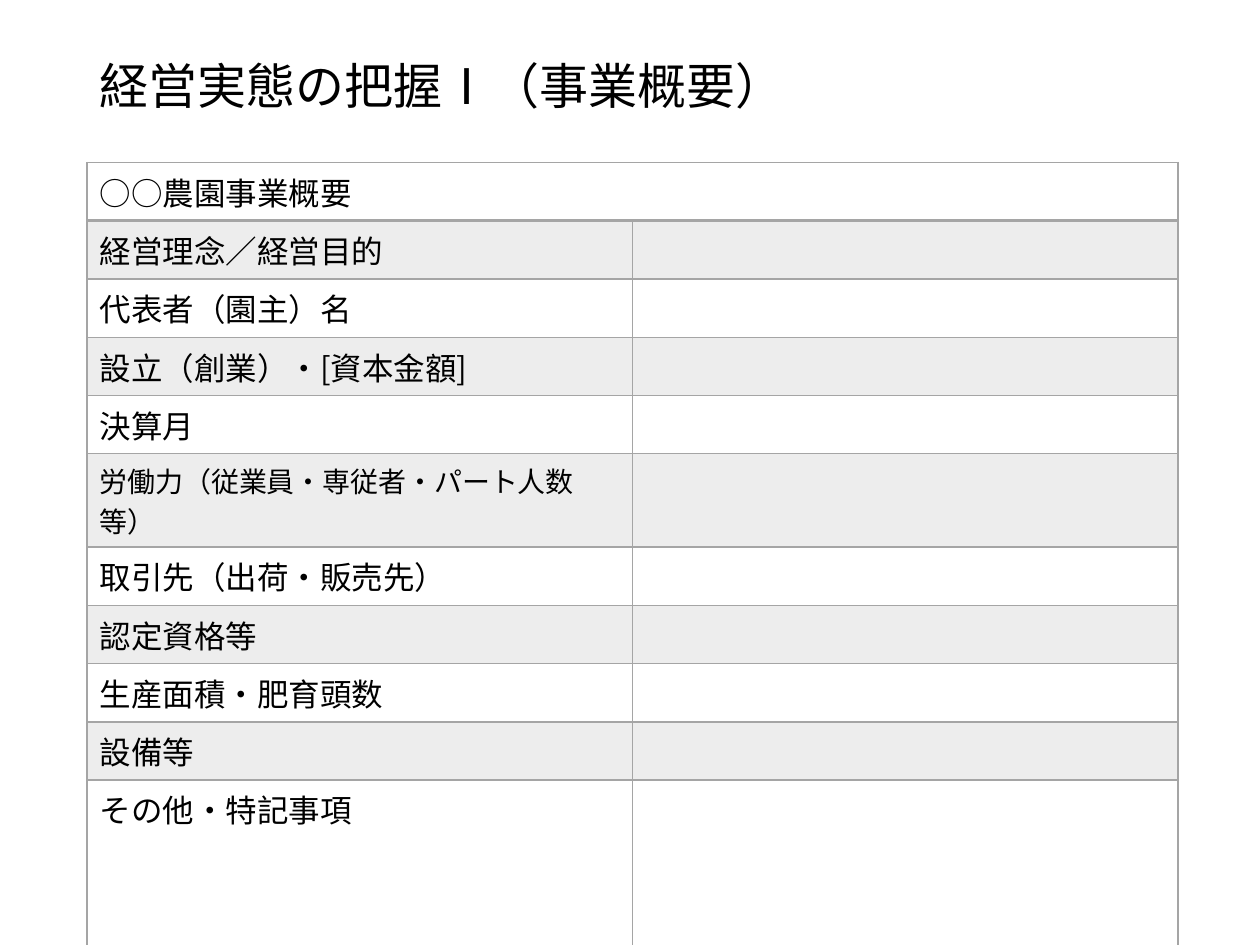
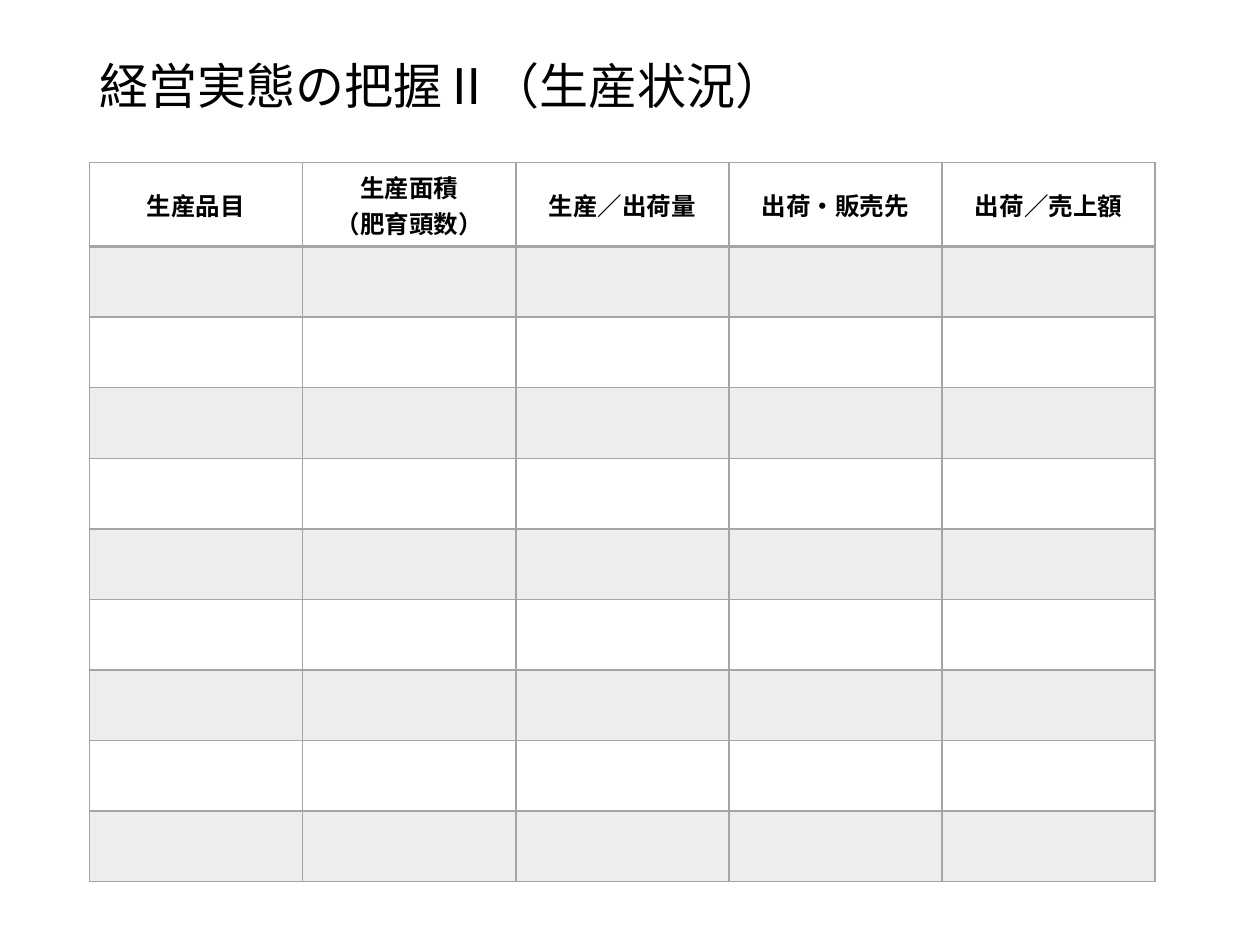
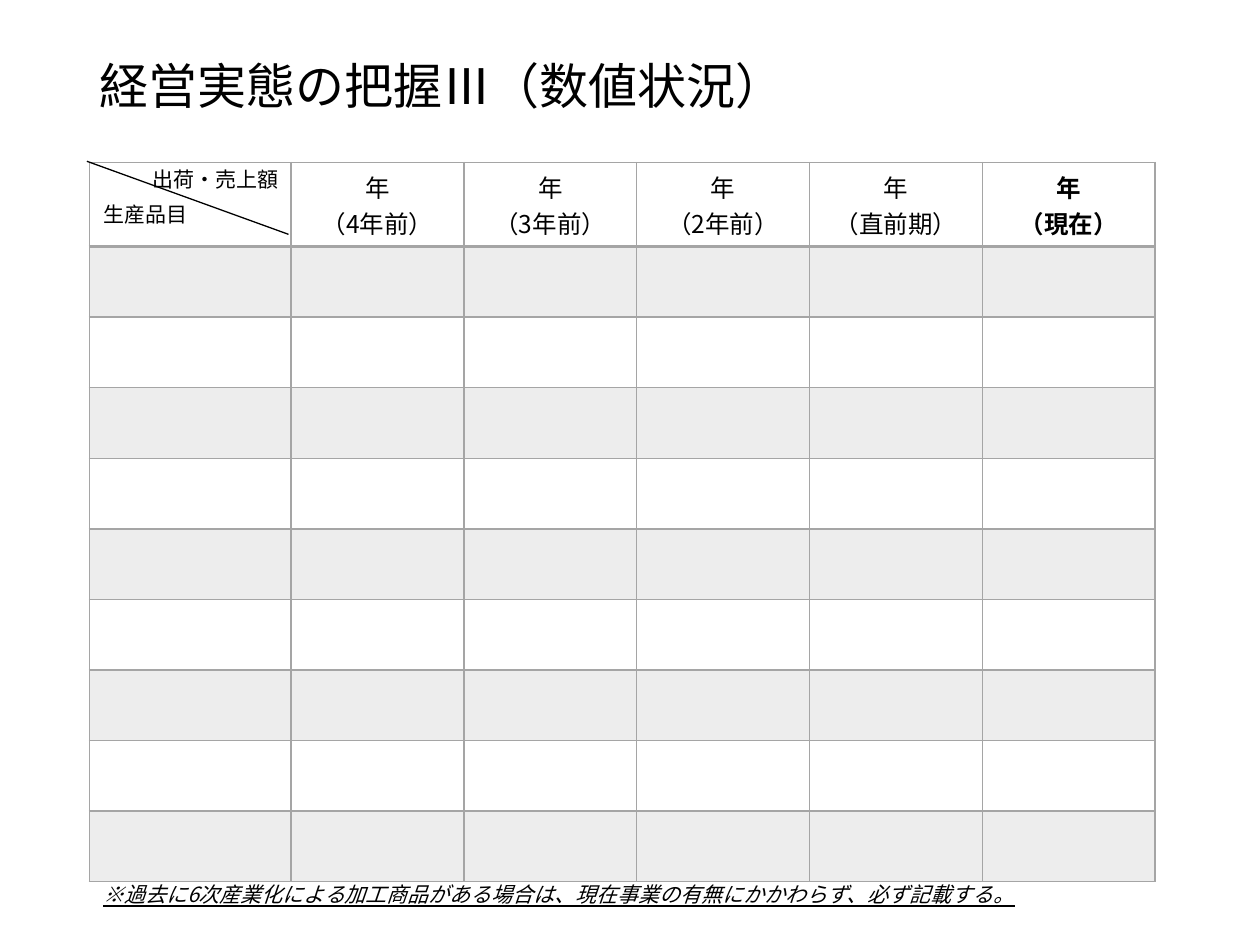
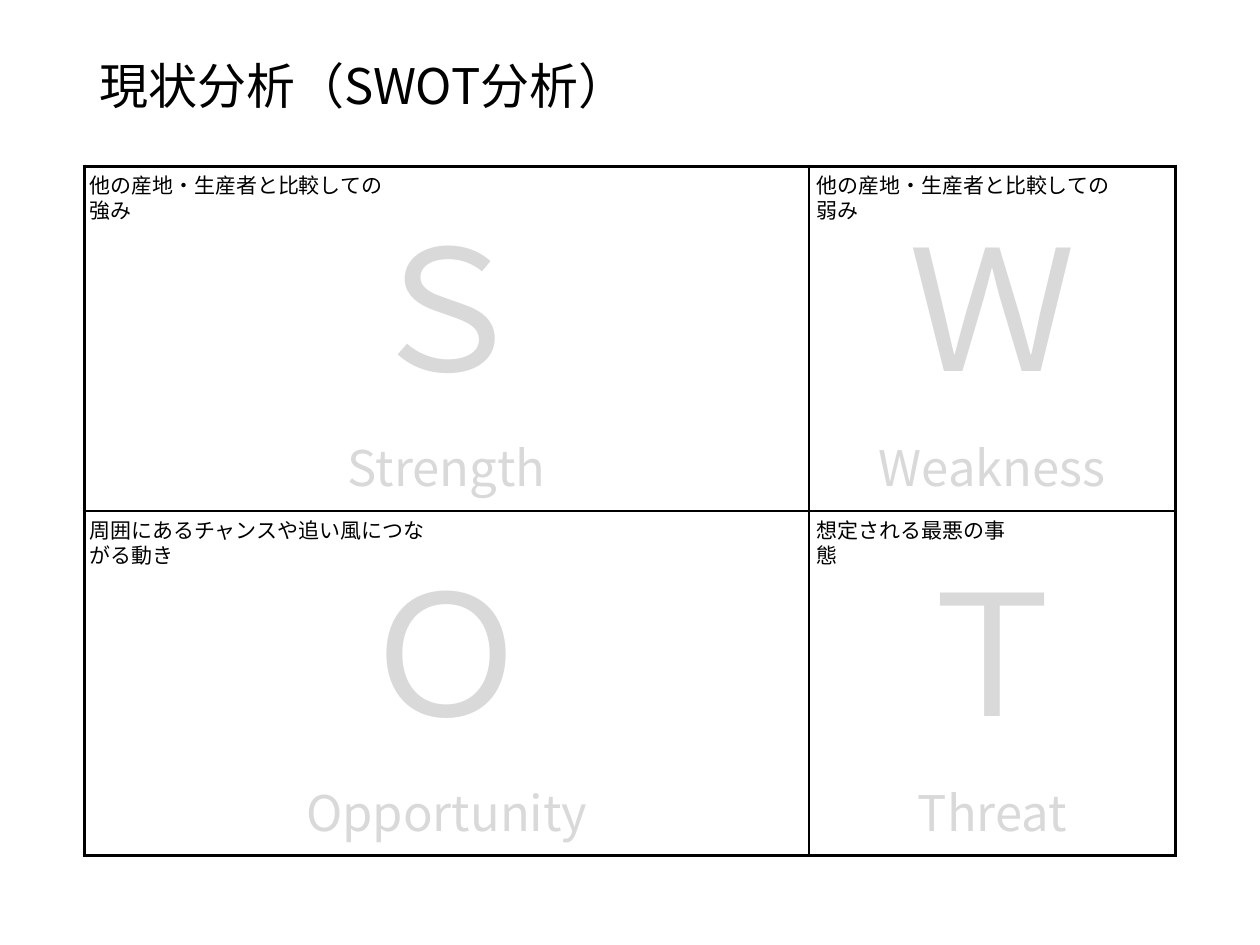
from dataclasses import dataclass

import lxml.etree
import pptx
import pptx.dml.color
import pptx.enum.shapes
import pptx.enum.text
import pptx.oxml.ns
import pptx.presentation
import pptx.shapes.autoshape
import pptx.slide
import pptx.table
import pptx.text.text
import pptx.util

ALIGN = pptx.enum.text.PP_ALIGN
ANCHOR = pptx.enum.text.MSO_ANCHOR
FIT = pptx.enum.text.MSO_AUTO_SIZE
qn = pptx.oxml.ns.qn

WIDE, HIGH = pptx.util.Inches(10), pptx.util.Inches(7.5)
COLS = 100  # the slide is a grid of 100 by 75 square units


@dataclass(frozen=True)
class Theme:
    ink: str = "000000"
    rule: str = "A5A5A5"
    ghost: str = "D9D9D9"
    tint: int = 20
    font: str = "Noto Sans CJK JP"
    latin: str = "Calibri"
    title: float = 28
    body: float = 18
    small: float = 16
    head: float = 14
    note: float = 12
    huge: float = 96


@dataclass(frozen=True)
class Box:
    """A place on the slide, in grid units."""
    left: float
    top: float
    width: float
    height: float


@dataclass(frozen=True)
class Grid:
    """A table: its corner, columns and rows in grid units, and its lines in points."""
    left: float
    top: float
    cols: tuple[float, ...]
    rows: tuple[float, ...]
    rule: str
    outer: float = 1
    under: float = 1
    bands: bool = True


@dataclass(frozen=True)
class Force:
    """One quarter of the SWOT table, with the width of its caption."""
    row: int
    col: int
    sign: str
    name: str
    note: str
    width: float


THEME = Theme()
TITLE = Box(6.9, 4, 86.2, 6.1)
SHEET = (5.8,) + (5.6,) * 9

FACTS = (
    "○○農園事業概要",
    "経営理念／経営目的",
    "代表者（園主）名",
    "設立（創業）・[資本金額]",
    "決算月",
    "労働力（従業員・専従者・パート人数等）",
    "取引先（出荷・販売先）",
    "認定資格等",
    "生産面積・肥育頭数",
    "設備等",
    "その他・特記事項",
)
LONG = 5  # the row of FACTS set in smaller type

HEADS = (
    ("生産品目", THEME.latin),
    ("生産面積\n（肥育頭数）", THEME.latin),
    ("生産／出荷量", THEME.latin),
    ("出荷・販売先", THEME.font),
    ("出荷／売上額", THEME.latin),
)

YEARS = ("4年前", "3年前", "2年前", "直前期", "現在")

FORCES = (
    Force(0, 0, "Ｓ", "Strength", "他の産地・生産者と比較しての強み", 25.8),
    Force(0, 1, "Ｗ", "Weakness", "他の産地・生産者と比較しての弱み", 25.8),
    Force(1, 0, "Ｏ", "Opportunity", "周囲にあるチャンスや追い風につながる動き", 30.1),
    Force(1, 1, "Ｔ", "Threat", "想定される最悪の事態", 17.4),
)


def unit(count: float) -> int:
    return round(WIDE * count / COLS)


def place(box: Box) -> tuple[int, int, int, int]:
    return unit(box.left), unit(box.top), unit(box.width), unit(box.height)


def tone(code: str) -> pptx.dml.color.RGBColor:
    return pptx.dml.color.RGBColor.from_string(code)


def write(frame: pptx.text.text.TextFrame, text: str, *, size: float,
          color: str = THEME.ink, font: str = THEME.font, bold: bool = False,
          slant: bool = False, under: bool = False, align: ALIGN = ALIGN.LEFT,
          lead: float | None = None, gap: float = 0) -> None:
    """Add each line of the text as a paragraph; gap is a share of the type size."""
    for line in text.split("\n"):
        para = frame.paragraphs[0]
        if para.runs:
            para = frame.add_paragraph()
        para.alignment = align
        if lead:
            para.line_spacing = lead
        if gap:
            para.space_before = pptx.util.Pt(size * gap)
        run = para.add_run()
        run.text = line
        style = run.font
        style.name, style.size, style.bold = font, pptx.util.Pt(size), bold
        style.italic, style.underline = slant, under
        style.color.rgb = tone(color)
        east = lxml.etree.Element(qn("a:ea"), typeface=THEME.font)
        run._r.rPr.find(qn("a:latin")).addnext(east)


def start(deck: pptx.presentation.Presentation, text: str) -> pptx.slide.Slide:
    """Add a title-only slide and set its title."""
    slide = deck.slides.add_slide(deck.slide_layouts[5])
    title = slide.shapes.title
    title.left, title.top, title.width, title.height = place(TITLE)
    frame = title.text_frame
    frame.auto_size = FIT.NONE
    frame.vertical_anchor = ANCHOR.MIDDLE
    write(frame, text, size=THEME.title, lead=0.9)
    return slide


def label(slide: pptx.slide.Slide, box: Box, text: str, **style) -> None:
    frame = slide.shapes.add_textbox(*place(box)).text_frame
    frame.word_wrap = True
    frame.auto_size = FIT.SHAPE_TO_FIT_TEXT
    write(frame, text, size=THEME.note, **style)


def edge(cell: pptx.table._Cell, lines: dict[str, float], color: str) -> None:
    """Draw the sides of a cell; the lines must stand before its fill."""
    props = cell._tc.get_or_add_tcPr()
    for spot, (side, width) in enumerate(lines.items()):
        line = lxml.etree.Element(qn(f"a:ln{side}"), w=str(pptx.util.Pt(width)))
        fill = lxml.etree.SubElement(line, qn("a:solidFill"))
        lxml.etree.SubElement(fill, qn("a:srgbClr"), val=color)
        props.insert(spot, line)


def shade(cell: pptx.table._Cell, band: bool) -> None:
    if not band:
        cell.fill.background()
        return
    cell.fill.solid()
    cell.fill.fore_color.rgb = tone(THEME.rule)
    color = cell._tc.tcPr.find(".//" + qn("a:srgbClr"))
    lxml.etree.SubElement(color, qn("a:alpha"), val=str(THEME.tint * 1000))


def draw(slide: pptx.slide.Slide, grid: Grid) -> pptx.table.Table:
    """Add a table with its lines and bands, and no text."""
    wide, high = len(grid.cols), len(grid.rows)
    box = Box(grid.left, grid.top, sum(grid.cols), sum(grid.rows))
    table = slide.shapes.add_table(high, wide, *place(box)).table
    table.first_row = table.horz_banding = False
    for col, width in zip(table.columns, grid.cols):
        col.width = unit(width)
    for row, height in zip(table.rows, grid.rows):
        row.height = unit(height)

    across = [grid.outer, grid.under] + [1] * (high - 2) + [grid.outer]
    down = [grid.outer] + [1] * (wide - 1) + [grid.outer]
    for r in range(high):
        for c in range(wide):
            cell = table.cell(r, c)
            shade(cell, grid.bands and r % 2 == 1)
            edge(cell, {"L": down[c], "R": down[c + 1],
                        "T": across[r], "B": across[r + 1]}, grid.rule)
    return table


def center(cell: pptx.table._Cell, text: str, **style) -> None:
    cell.vertical_anchor = ANCHOR.MIDDLE
    write(cell.text_frame, text, align=ALIGN.CENTER, **style)


def profile(deck: pptx.presentation.Presentation) -> None:
    slide = start(deck, "経営実態の把握Ⅰ（事業概要）")
    rows = (4,) * (len(FACTS) - 1) + (16.1,)
    table = draw(slide, Grid(6.9, 12.9, (43.3,) * 2, rows, THEME.rule, under=2))
    table.cell(0, 0).merge(table.cell(0, 1))
    for row, fact in enumerate(FACTS):
        size = THEME.small if row == LONG else THEME.body
        write(table.cell(row, 0).text_frame, fact, size=size)


def output(deck: pptx.presentation.Presentation) -> None:
    slide = start(deck, "経営実態の把握Ⅱ（生産状況）")
    cols = (84.6 / len(HEADS),) * len(HEADS)
    table = draw(slide, Grid(7.1, 12.9, cols, SHEET, THEME.rule, under=2))
    for col, (head, font) in enumerate(HEADS):
        center(table.cell(0, col), head, size=THEME.head, font=font, bold=True)


def figures(deck: pptx.presentation.Presentation) -> None:
    slide = start(deck, "経営実態の把握Ⅲ（数値状況）")
    cols = (16,) + (13.72,) * len(YEARS)
    table = draw(slide, Grid(7.1, 12.9, cols, SHEET, THEME.rule, under=2))
    for col, year in enumerate(YEARS, 1):
        center(table.cell(0, col), f"年\n（{year}）", size=THEME.head,
               bold=col == len(YEARS))

    slash = slide.shapes.add_connector(
        pptx.enum.shapes.MSO_CONNECTOR.STRAIGHT,
        unit(6.9), unit(12.8), unit(22.9), unit(18.6))
    slash.line.color.rgb = tone(THEME.ink)
    slash.line.width = pptx.util.Pt(0.75)
    lxml.etree.SubElement(slash._element.spPr, qn("a:effectLst"))

    label(slide, Box(7.2, 15.5, 12.1, 3), "生産品目")
    label(slide, Box(11, 12.7, 12.1, 3), "出荷・売上額", align=ALIGN.RIGHT)
    label(slide, Box(7.2, 69.5, 84.5, 3),
          "※過去に6次産業化による加工商品がある場合は、現在事業の有無にかかわらず、必ず記載する。",
          slant=True, under=True)


def swot(deck: pptx.presentation.Presentation) -> None:
    slide = start(deck, "現状分析（SWOT分析）")
    grid = Grid(6.7, 13.2, (57.5, 29.1), (27.35,) * 2, THEME.ink,
                outer=2.25, bands=False)
    table = draw(slide, grid)
    for force in FORCES:
        cell = table.cell(force.row, force.col)
        for text, size in ((force.sign, THEME.huge), (force.name, THEME.title)):
            center(cell, text, size=size, color=THEME.ghost, gap=0.2)
        left = grid.left - 0.6 + sum(grid.cols[:force.col]) + 0.2 * force.col
        top = grid.top + sum(grid.rows[:force.row])
        label(slide, Box(left, top, force.width, 3), force.note)


def main() -> None:
    deck = pptx.Presentation()
    deck.slide_width, deck.slide_height = WIDE, HIGH
    for build in (profile, output, figures, swot):
        build(deck)
    deck.save("out.pptx")


if __name__ == "__main__":
    main()
